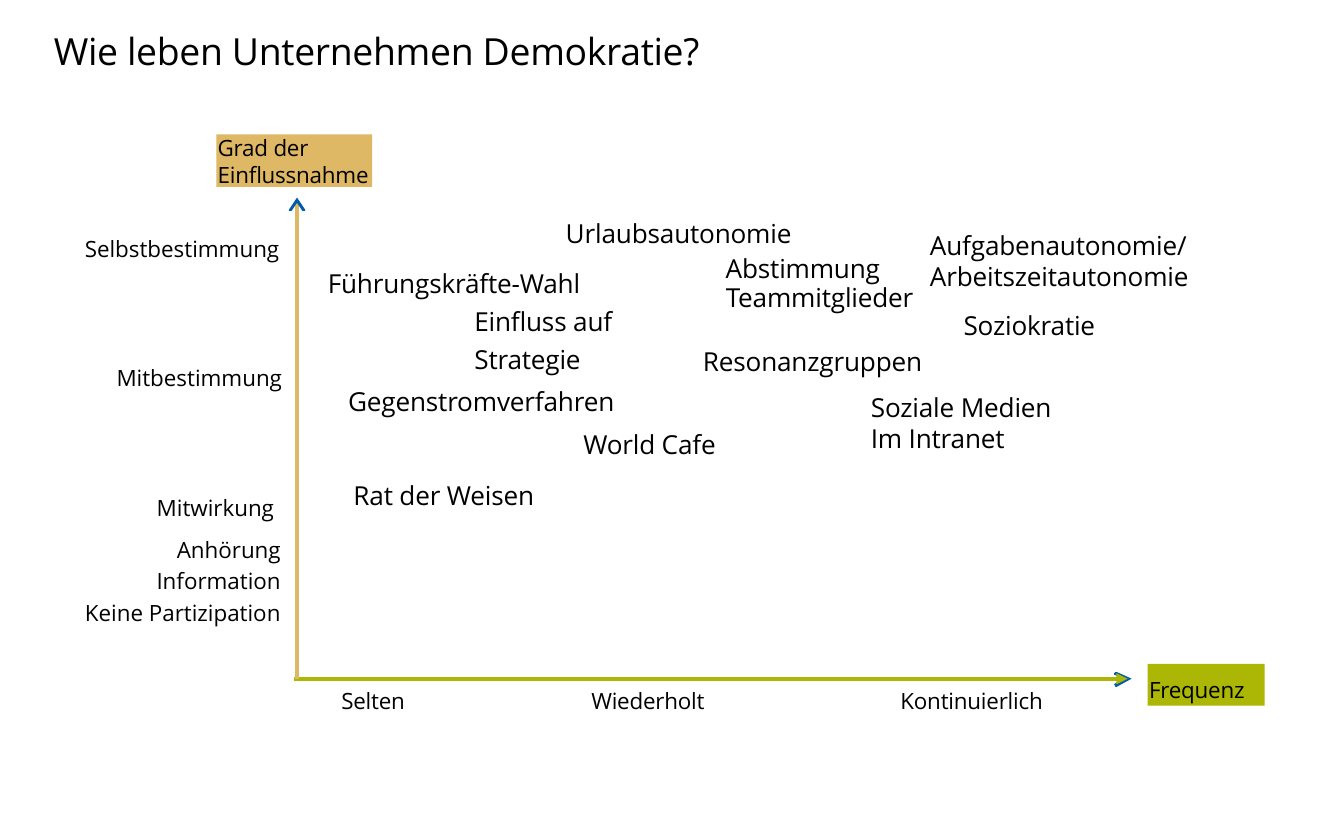
import pptx
import pptx.util
import pptx.dml.color
import pptx.enum.shapes
import pptx.enum.text
import pptx.oxml.ns
from lxml import etree

SCALE = 9144
FONT = "Open Sans"
COLORS = {
    "text": "000000",
    "influence": "DEB865",
    "frequency": "ABB605",
    "arrowhead": "005CA9",
}
LEFT = pptx.enum.text.PP_ALIGN.LEFT
RIGHT = pptx.enum.text.PP_ALIGN.RIGHT
TOP = pptx.enum.text.MSO_ANCHOR.TOP
MIDDLE = pptx.enum.text.MSO_ANCHOR.MIDDLE
Pt = pptx.util.Pt

METHODS = [
    ((243, 199, 226, 25), [("Führungskräfte-Wahl", {})]),
    ((352, 223, 126, 47), [("Einfluss auf Strategie", {"line_spacing": Pt(20)})]),
    ((420, 159, 257, 45), [
        ("Urlaubsautonomie", {"line_spacing": Pt(18.9)}),
        ("Abstimmung", {"line_spacing": Pt(18.9), "indent": 119}),
    ]),
    ((539, 209, 169, 25), [("Teammitglieder", {})]),
    ((691, 171, 226, 25), [("Aufgabenautonomie/", {})]),
    ((691, 194, 227, 25), [("Arbeitszeitautonomie", {})]),
    ((647, 291, 195, 50), [("Soziale Medien", {}), ("Im Intranet", {})]),
    ((258, 287, 298, 91), [
        ("Gegenstromverfahren", {}),
        ("World Cafe", {"space_before": Pt(6), "indent": 175}),
        ("Rat der Weisen", {"space_before": Pt(10.5), "indent": 4}),
    ]),
    ((522, 257, 192, 25), [("Resonanzgruppen", {})]),
    ((716, 230, 120, 25), [("Soziokratie", {})]),
]
INFLUENCE_LEVELS = [
    ((56, 175, 152, 28), ["Selbstbestimmung"]),
    ((49, 271, 161, 23), ["Mitbestimmung"]),
    ((49, 368, 155, 23), ["Mitwirkung"]),
    ((49, 399, 160, 70), ["Anhörung", "Information", "Keine Partizipation"]),
]
FREQUENCY_LEVELS = [("Selten", 253), ("Wiederholt", 439), ("Kontinuierlich", 669)]
RIGHT_HEAD = [(831, 500), (830, 500), (829, 501), (829, 502), (836, 505),
              (829, 509), (830, 511), (831, 511), (842, 505)]
UP_HEAD = [(221, 147), (215, 156), (215, 157), (217, 157), (221, 151),
           (225, 157), (227, 157), (227, 156)]


def px(*lengths):
    return [pptx.util.Emu(length * SCALE) for length in lengths]


def rgb(name):
    return pptx.dml.color.RGBColor.from_string(COLORS[name])


def apply(target, values):
    for attribute, value in values.items():
        setattr(target, attribute, value)


def write(frame, paragraphs, size, align=LEFT, anchor=TOP, spacing=-10, inset=1):
    apply(frame, {
        "margin_left": px(inset)[0], "margin_right": 0, "margin_top": 0,
        "margin_bottom": 0, "word_wrap": True, "vertical_anchor": anchor,
    })
    for index, (text, values) in enumerate(paragraphs):
        paragraph = frame.add_paragraph() if index else frame.paragraphs[0]
        formats = {"alignment": align, "space_before": Pt(0), **values}
        indent = formats.pop("indent", 0)
        apply(paragraph, formats)
        if indent:
            paragraph._p.get_or_add_pPr().set("marL", str(indent * SCALE))
        run = paragraph.add_run()
        run.text = text
        apply(run.font, {"name": FONT, "size": Pt(size), "bold": False})
        run.font.color.rgb = rgb("text")
        run._r.get_or_add_rPr().set("spc", str(spacing))


def add_title(slide, text):
    title = slide.shapes.title
    apply(title, dict(zip(("left", "top", "width", "height"), px(0, 0, 850, 76))))
    write(title.text_frame, [(text, {})], 20, anchor=MIDDLE, spacing=-20, inset=40)


def add_label(slide, box, paragraphs, size, **options):
    label = slide.shapes.add_textbox(*px(*box))
    write(label.text_frame, paragraphs, size, **options)


def add_axis_name(slide, box, paragraphs, color):
    rectangle = pptx.enum.shapes.MSO_SHAPE.RECTANGLE
    plate = slide.shapes.add_shape(rectangle, *px(*box))
    paint(plate, color)
    write(plate.text_frame, paragraphs, 12)


def paint(shape, color):
    shape.shadow.inherit = False
    shape.fill.solid()
    shape.fill.fore_color.rgb = rgb(color)
    shape.line.fill.background()


def add_arrowhead(slide, points):
    builder = slide.shapes.build_freeform(*points[0], scale=SCALE)
    builder.add_line_segments(points[1:], close=True)
    paint(builder.convert_to_shape(), "arrowhead")


def add_axis(slide, start, end, color, arrow=False):
    straight = pptx.enum.shapes.MSO_CONNECTOR.STRAIGHT
    axis = slide.shapes.add_connector(straight, *px(*start, *end))
    axis.line.color.rgb = rgb(color)
    axis.line.width = Pt(2)
    qn = pptx.oxml.ns.qn
    if arrow:
        etree.SubElement(axis.line._get_or_add_ln(), qn("a:tailEnd"), type="triangle")
    etree.SubElement(axis._element.spPr, qn("a:effectLst"))


def main():
    presentation = pptx.Presentation()
    apply(presentation, dict(zip(("slide_width", "slide_height"), px(1000, 625))))
    slide = presentation.slides.add_slide(presentation.slide_layouts[5])
    add_title(slide, "Wie leben Unternehmen Demokratie?")

    add_arrowhead(slide, RIGHT_HEAD)
    for box, paragraphs in METHODS:
        add_label(slide, box, paragraphs, 14)

    add_axis(slide, (219, 505), (839, 505), "frequency", arrow=True)
    add_axis(slide, (221, 505), (221, 149), "influence")
    add_arrowhead(slide, UP_HEAD)
    add_axis_name(slide, (161, 100, 116, 39),
                  [("Grad der", {}), ("Einflussnahme", {})], "influence")
    add_axis_name(slide, (854, 494, 87, 31),
                  [("Frequenz", {"line_spacing": Pt(21)})], "frequency")

    for box, levels in INFLUENCE_LEVELS:
        paragraphs = [(level, {"space_before": Pt(2.4 if index else 0)})
                      for index, level in enumerate(levels)]
        add_label(slide, box, paragraphs, 12, align=RIGHT, spacing=0)
    for level, left in FREQUENCY_LEVELS:
        add_label(slide, (left, 511, 146, 23), [(level, {})], 12)

    presentation.save("out.pptx")


if __name__ == "__main__":
    main()
